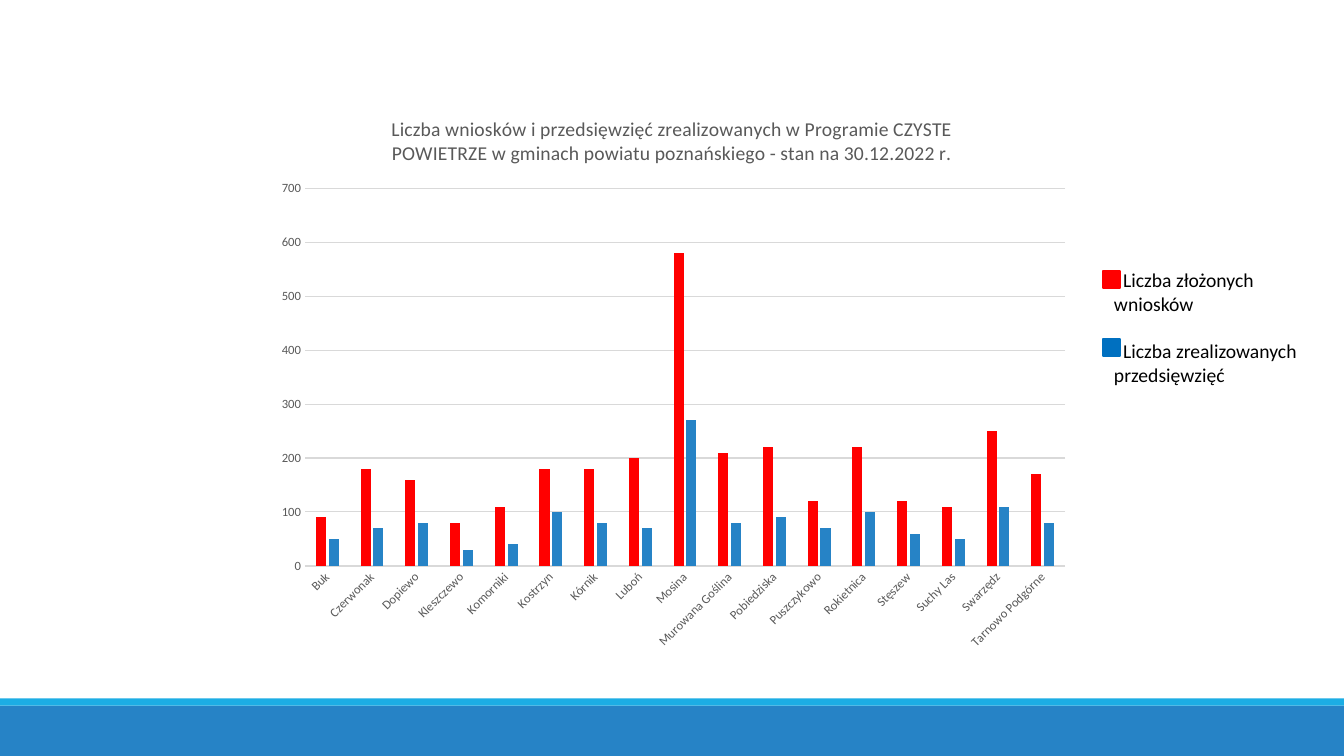
from lxml.etree import SubElement
from pptx import Presentation
from pptx.chart.data import CategoryChartData
from pptx.dml.color import RGBColor
from pptx.enum.chart import XL_CHART_TYPE, XL_TICK_MARK
from pptx.enum.shapes import MSO_SHAPE
from pptx.enum.text import MSO_AUTO_SIZE
from pptx.oxml.ns import qn
from pptx.util import Inches, Pt

COLORS = {
    "band": "2683C6",
    "stripe": "1CADE4",
    "submitted": "FF0000",
    "completed": "0070C0",
    "label": "595959",
    "grid": "D9D9D9",
    "text": "000000",
}
FONT = "Calibri"
TITLE = (
    "Liczba wniosków i przedsięwzięć zrealizowanych w Programie CZYSTE "
    "POWIETRZE w gminach powiatu poznańskiego - stan na 30.12.2022 r."
)
LEGEND = [
    ("Liczba złożonych wniosków", "submitted", 2.69),
    ("Liczba zrealizowanych przedsięwzięć", "completed", 3.36),
]
APPLICATIONS = [
    ("Buk", 90, 50),
    ("Czerwonak", 180, 70),
    ("Dopiewo", 160, 80),
    ("Kleszczewo", 80, 30),
    ("Komorniki", 110, 40),
    ("Kostrzyn", 180, 100),
    ("Kórnik", 180, 80),
    ("Luboń", 200, 70),
    ("Mosina", 580, 270),
    ("Murowana Goślina", 210, 80),
    ("Pobiedziska", 220, 90),
    ("Puszczykowo", 120, 70),
    ("Rokietnica", 220, 100),
    ("Stęszew", 120, 60),
    ("Suchy Las", 110, 50),
    ("Swarzędz", 250, 110),
    ("Tarnowo Podgórne", 170, 80),
]


def color(name):
    return RGBColor.from_string(COLORS[name])


def style_font(font, size, color_name):
    font.name = FONT
    font.size = Pt(size)
    font.bold = False
    font.color.rgb = color(color_name)


def add_rectangle(slide, left, top, width, height, fill, outlined=False):
    shape = slide.shapes.add_shape(
        MSO_SHAPE.RECTANGLE, Inches(left), Inches(top), Inches(width), Inches(height)
    )
    shape.shadow.inherit = False
    shape.fill.solid()
    shape.fill.fore_color.rgb = color(fill)
    if outlined:
        shape.line.color.rgb = color(fill)
        shape.line.width = Pt(1.25)
    else:
        shape.line.fill.background()


def set_plot_layout(chart, **fractions):
    plot_area = chart.plots[0]._element.getparent()
    layout = plot_area.find(qn("c:layout"))
    if layout is None:
        layout = SubElement(plot_area, qn("c:layout"))
        plot_area.insert(0, layout)
    manual = SubElement(layout, qn("c:manualLayout"))
    SubElement(manual, qn("c:layoutTarget")).set("val", "inner")
    for mode in ("xMode", "yMode"):
        SubElement(manual, qn(f"c:{mode}")).set("val", "edge")
    for name, fraction in fractions.items():
        SubElement(manual, qn(f"c:{name}")).set("val", str(fraction))


def style_axes(chart):
    for axis in (chart.category_axis, chart.value_axis):
        axis.major_tick_mark = XL_TICK_MARK.NONE
        axis.minor_tick_mark = XL_TICK_MARK.NONE
        style_font(axis.tick_labels.font, 9, "label")
    gridlines = chart.value_axis.major_gridlines
    for line in (chart.category_axis.format.line, gridlines.format.line):
        line.color.rgb = color("grid")
        line.width = Pt(0.75)
    chart.value_axis.format.line.fill.background()
    chart.value_axis.minimum_scale = 0
    chart.value_axis.maximum_scale = 700
    chart.value_axis.major_unit = 100
    labels = chart.category_axis._element.find(qn("c:txPr"))
    labels.find(qn("a:bodyPr")).set("rot", "-2700000")


def add_applications_chart(slide):
    names, submitted, completed = zip(*APPLICATIONS)
    data = CategoryChartData()
    data.categories = names
    data.add_series("Series 1", submitted)
    data.add_series("Series 2", completed)
    chart = slide.shapes.add_chart(
        XL_CHART_TYPE.COLUMN_CLUSTERED,
        Inches(2.62), Inches(0.94), Inches(8.09), Inches(5.62), data,
    ).chart
    style_font(chart.font, 10, "text")
    chart.has_legend = False
    chart.has_title = True
    run = chart.chart_title.text_frame.paragraphs[0].add_run()
    run.text = TITLE
    style_font(run.font, 14, "label")
    chart.chart_title.include_in_layout = False
    plot = chart.plots[0]
    plot.gap_width = 219
    plot.overlap = -27
    plot.vary_by_categories = False
    for series, fill in zip(plot.series, ("submitted", "band")):
        series.format.fill.solid()
        series.format.fill.fore_color.rgb = color(fill)
        series.invert_if_negative = False
    style_axes(chart)
    set_plot_layout(chart, x=0.05, y=0.165, w=0.932, h=0.667)


def add_legend(slide):
    box = slide.shapes.add_textbox(
        Inches(10.95), Inches(2.61), Inches(2.11), Inches(1.58)
    )
    frame = box.text_frame
    frame.word_wrap = True
    frame.auto_size = MSO_AUTO_SIZE.SHAPE_TO_FIT_TEXT
    for index, (text, fill, top) in enumerate(LEGEND):
        paragraph = frame.add_paragraph() if index else frame.paragraphs[0]
        paragraph.space_before = Pt(17 * index)
        paragraph._p.get_or_add_pPr().set("indent", str(Inches(0.09)))
        run = paragraph.add_run()
        run.text = text
        style_font(run.font, 14, "text")
        add_rectangle(slide, 10.94, top, 0.17, 0.17, fill, outlined=True)


def main():
    presentation = Presentation()
    presentation.slide_width = Inches(13.33)
    presentation.slide_height = Inches(7.5)
    slide = presentation.slides.add_slide(presentation.slide_layouts[6])
    add_rectangle(slide, 0, 7, 13.33, 0.5, "band")
    add_rectangle(slide, 0, 6.93, 13.33, 0.07, "stripe")
    add_applications_chart(slide)
    add_legend(slide)
    presentation.save("out.pptx")


if __name__ == "__main__":
    main()
